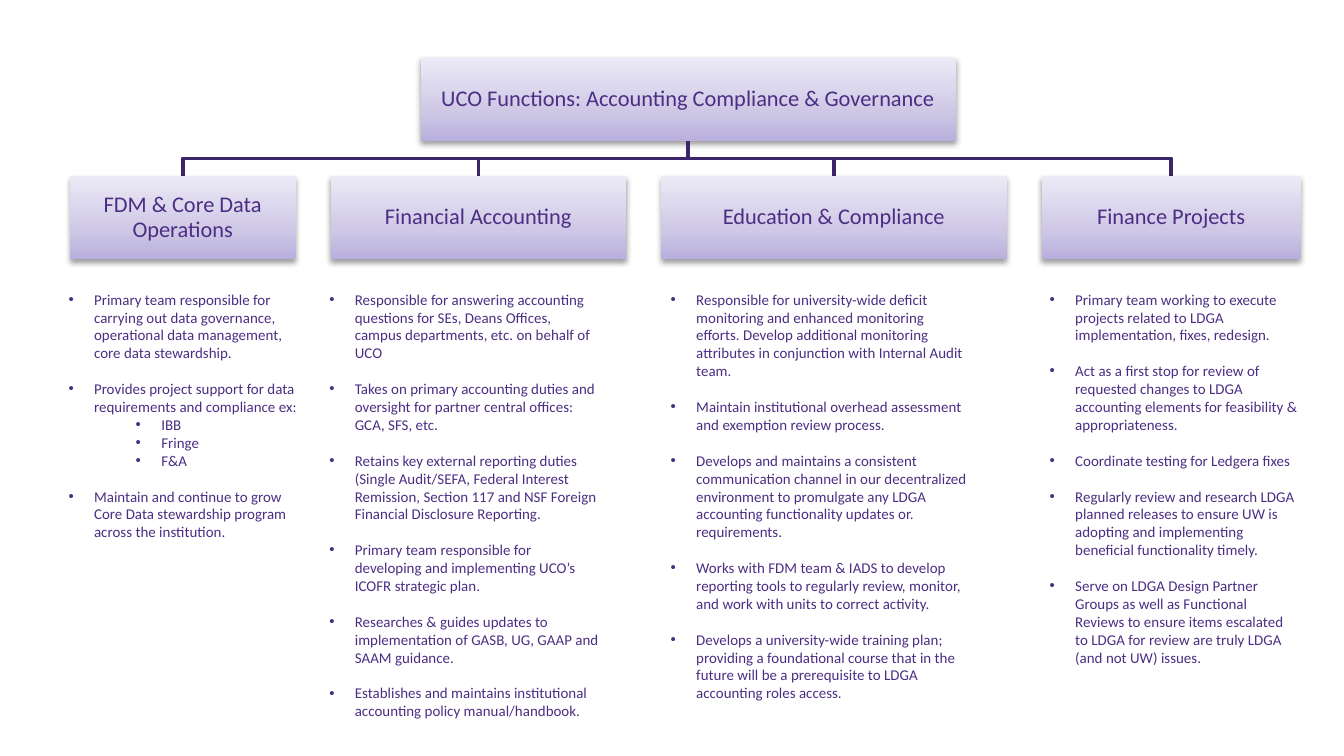
from copy import deepcopy

from pptx import Presentation
from pptx.dml.color import RGBColor
from pptx.enum import shapes, text
from pptx.oxml import parse_xml
from pptx.oxml.ns import nsdecls, qn
from pptx.util import Inches, Pt

COLORS = {
    "text": "4B2E83",
    "line": "3C2569",
    "bottom": "B9AFDD",
    "middle": "CEC8E6",
    "top": "ECEAF6",
}
FONT = "Calibri"
BOX_HEIGHT = 0.62
BOX_GAP = 0.26
ROOT_BOX = (3.13, 0.43, 3.98, BOX_HEIGHT)
TEAM_LEFT, TEAM_TOP = 0.52, 1.31
LIST_TOP = 2.11

# Each team: heading, box width, list (left, width, height), items as (level, text)
TEAMS = [
    ("FDM & Core Data Operations", 1.68, (0.41, 1.94, 2.12), [
        (0, "Primary team responsible for carrying out data governance, operational data "
            "management, core data stewardship."),
        (0, "Provides project support for data requirements and compliance ex:"),
        (1, "IBB"),
        (1, "Fringe"),
        (1, "F&A"),
        (0, "Maintain and continue to grow Core Data stewardship program across the "
            "institution."),
    ]),
    ("Financial Accounting", 2.2, (2.35, 2.21, 3.33), [
        (0, "Responsible for answering accounting questions for SEs, Deans Offices, campus "
            "departments, etc. on behalf of UCO"),
        (0, "Takes on primary accounting duties and oversight for partner central offices: "
            "GCA, SFS, etc."),
        (0, "Retains key external reporting duties (Single Audit/SEFA, Federal Interest "
            "Remission, Section 117 and NSF Foreign Financial Disclosure Reporting."),
        (0, "Primary team responsible for developing and implementing UCO’s ICOFR "
            "strategic plan."),
        (0, "Researches & guides updates to implementation of GASB, UG, GAAP and SAAM "
            "guidance."),
        (0, "Establishes and maintains institutional accounting policy manual/handbook."),
    ]),
    ("Education & Compliance", 2.57, (4.89, 2.41, 3.33), [
        (0, "Responsible for university-wide deficit monitoring and enhanced monitoring "
            "efforts. Develop additional monitoring attributes in conjunction with Internal "
            "Audit team."),
        (0, "Maintain institutional overhead assessment and exemption review process."),
        (0, "Develops and maintains a consistent communication channel in our decentralized "
            "environment to promulgate any LDGA accounting functionality updates or. "
            "requirements."),
        (0, "Works with FDM team & IADS to develop reporting tools to regularly review, "
            "monitor, and work with units to correct activity."),
        (0, "Develops a university-wide training plan; providing a foundational course that "
            "in the future will be a prerequisite to LDGA accounting roles access."),
    ]),
    ("Finance Projects", 1.93, (7.71, 2.05, 3.06), [
        (0, "Primary team working to execute projects related to LDGA implementation, "
            "fixes, redesign."),
        (0, "Act as a first stop for review of requested changes to LDGA accounting elements "
            "for feasibility & appropriateness."),
        (0, "Coordinate testing for Ledgera fixes"),
        (0, "Regularly review and research LDGA planned releases to ensure UW is adopting "
            "and implementing beneficial functionality timely."),
        (0, "Serve on LDGA Design Partner Groups as well as Functional Reviews to ensure "
            "items escalated to LDGA for review are truly LDGA (and not UW) issues."),
    ]),
]


def color(name):
    return RGBColor.from_string(COLORS[name])


def place(shape, box):
    shape.left, shape.top, shape.width, shape.height = map(Inches, box)


def set_frame(shape, anchor, side, end):
    frame = shape.text_frame
    frame.word_wrap = True
    frame.auto_size = text.MSO_AUTO_SIZE.NONE
    frame.vertical_anchor = anchor
    frame.margin_left = frame.margin_right = Inches(side)
    frame.margin_top = frame.margin_bottom = Inches(end)
    return frame


def set_font(paragraph, size):
    font = paragraph.font
    font.name, font.size, font.bold = FONT, Pt(size), False
    font.color.rgb = color("text")


def style_box(shape, label):
    """Give a chart box its gradient, soft shadow and centred label."""
    properties = shape._element.spPr
    shape.fill.gradient()
    shape.fill.gradient_angle = 90
    stop_list = properties.find(".//" + qn("a:gsLst"))
    stop_list.insert(1, deepcopy(stop_list[0]))
    stops = [("bottom", 0), ("middle", 0.35), ("top", 1)]
    for stop, (name, position) in zip(shape.fill.gradient_stops, stops):
        stop.color.rgb = color(name)
        stop.position = position
    shape.line.fill.background()
    shape.shadow.inherit = False
    properties.find(qn("a:effectLst")).append(parse_xml(
        f'<a:outerShdw {nsdecls("a")} blurRad="40000" dist="20000" dir="5400000" '
        'rotWithShape="0"><a:srgbClr val="000000"><a:alpha val="38000"/></a:srgbClr>'
        '</a:outerShdw>'))

    frame = set_frame(shape, text.MSO_ANCHOR.MIDDLE, 0.01, 0.01)
    frame.text = label
    paragraph = frame.paragraphs[0]
    paragraph.alignment = text.PP_ALIGN.CENTER
    paragraph.line_spacing = 0.9
    set_font(paragraph, 12)


def add_branch(slide, parent_box, child_box):
    """Draw the elbow line from the parent's bottom to the child's top."""
    start_x = parent_box[0] + parent_box[2] / 2
    start_y = parent_box[1] + parent_box[3]
    end_x, end_y = child_box[0] + child_box[2] / 2, child_box[1]
    middle_y = (start_y + end_y) / 2
    builder = slide.shapes.build_freeform(Inches(start_x), Inches(start_y))
    corners = [(start_x, middle_y), (end_x, middle_y), (end_x, end_y)]
    builder.add_line_segments([(Inches(x), Inches(y)) for x, y in corners], close=False)
    branch = builder.convert_to_shape()
    branch.fill.background()
    branch.line.color.rgb = color("line")
    branch.line.width = Pt(2)
    branch.shadow.inherit = False


def add_team_box(slide, box, label):
    shape = slide.shapes.add_shape(shapes.MSO_SHAPE.RECTANGLE, *map(Inches, box))
    style_box(shape, label)


def fill_list(placeholder, box, items):
    """Fill a body placeholder with the bulleted duties of a team."""
    place(placeholder, box)
    frame = set_frame(placeholder, text.MSO_ANCHOR.TOP, 0.1, 0.05)
    for index, (level, item) in enumerate(items):
        paragraph = frame.add_paragraph() if index else frame.paragraphs[0]
        paragraph.text = item
        paragraph.level = level
        paragraph.alignment = text.PP_ALIGN.LEFT
        paragraph.space_before = Pt(9.6 if index and level == 0 else 0)
        properties = paragraph._p.get_or_add_pPr()
        properties.set("marL", str(Inches(0.19 + 0.5 * level)))
        properties.set("indent", str(Inches(-0.19)))
        properties.append(parse_xml(f'<a:buFont {nsdecls("a")} typeface="Arial"/>'))
        properties.append(parse_xml(f'<a:buChar {nsdecls("a")} char="•"/>'))
        set_font(paragraph, 8)


def build_chart_slide(presentation):
    # The comparison layout has a title and four bodies
    slide = presentation.slides.add_slide(presentation.slide_layouts[4])

    # Root box
    title = slide.shapes.title
    place(title, ROOT_BOX)
    style_box(title, "UCO Functions: Accounting Compliance & Governance")

    # Team boxes, in a row with equal gaps
    team_boxes = []
    left = TEAM_LEFT
    for _, width, _, _ in TEAMS:
        team_boxes.append((left, TEAM_TOP, width, BOX_HEIGHT))
        left += width + BOX_GAP
    for box in team_boxes:
        add_branch(slide, ROOT_BOX, box)
    for box, (label, *_) in zip(team_boxes, TEAMS):
        add_team_box(slide, box, label)

    # Duty lists
    for index, (_, _, (left, width, height), items) in enumerate(TEAMS, start=1):
        fill_list(slide.placeholders[index], (left, LIST_TOP, width, height), items)


def main():
    presentation = Presentation()
    # Widescreen, 16:9
    presentation.slide_width = Inches(10)
    presentation.slide_height = presentation.slide_width * 9 // 16
    build_chart_slide(presentation)
    presentation.save("out.pptx")


if __name__ == "__main__":
    main()
